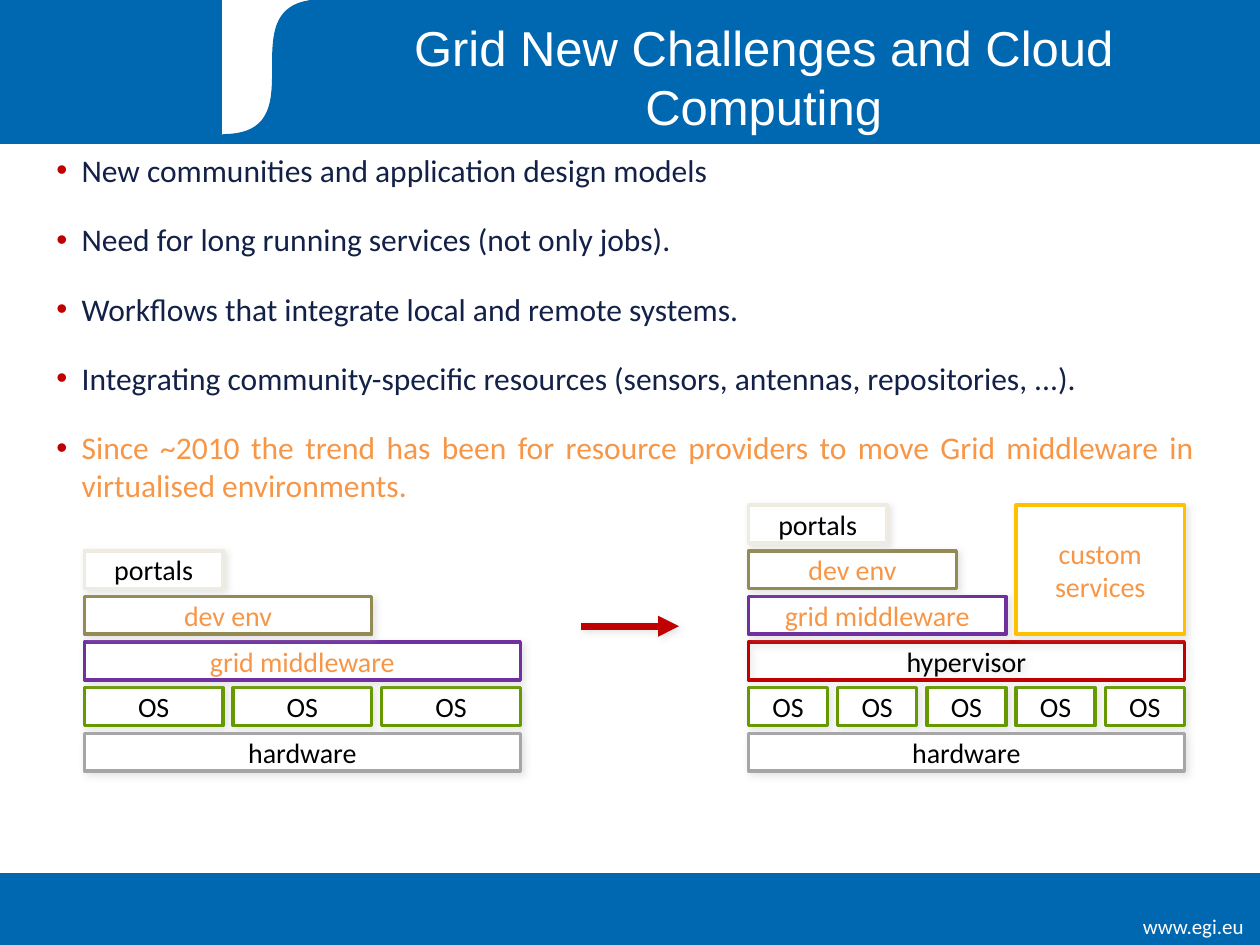
from lxml import etree
from pptx import Presentation
from pptx.dml.color import RGBColor
from pptx.enum.shapes import MSO_CONNECTOR, MSO_SHAPE
from pptx.enum.text import MSO_ANCHOR, PP_ALIGN
from pptx.oxml.ns import qn
from pptx.util import Inches, Pt

COLORS = {
    "blue": "0067B1", "white": "FFFFFF", "black": "000000", "navy": "132148",
    "orange": "F79646", "red": "C00000", "gray": "A6A6A6", "purple": "7030A0",
    "cream": "EEECE1", "olive": "948A54", "green": "669900", "gold": "FFC000",
    "shadow": "BFBFBF",
}
BULLETS = [
    ("New communities and application design models", "navy"),
    ("Need for long running services (not only jobs).", "navy"),
    ("Workflows that integrate local and remote systems.", "navy"),
    ("Integrating community-specific resources (sensors, antennas, repositories, ...).", "navy"),
    ("Since ~2010 the trend has been for resource providers to move Grid "
     "middleware in virtualised environments.", "orange"),
]
STACK_WIDTH, GAP = 3.46, 0.08
LAYER_HEIGHT, BOTTOM_LAYER, TOP_LAYER = 0.3, 5.82, 4.01
LAYER_PITCH = (BOTTOM_LAYER - TOP_LAYER) / 5
BEFORE, NOW = 0.67, 5.94  # left edges of the two stacks


def rgb(name):
    return RGBColor.from_string(COLORS[name])


def span(cells, columns):
    """Width of some neighbouring cells when a stack is cut into columns."""
    cell = (STACK_WIDTH - GAP * (columns - 1)) / columns
    return cells * cell + (cells - 1) * GAP


def add_run(paragraph, text, size, color, font="Calibri"):
    run = paragraph.add_run()
    run.text = text
    run.font.size, run.font.name = Pt(size), font
    run.font.color.rgb = rgb(color)


def paint(shape, fill, line=None, weight=0.75):
    shape.shadow.inherit = False
    if fill:
        shape.fill.solid()
        shape.fill.fore_color.rgb = rgb(fill)
    else:
        shape.fill.background()
    if line:
        shape.line.color.rgb = rgb(line)
        shape.line.width = Pt(weight)
    else:
        shape.line.fill.background()


def add_rect(slide, left, top, width, height, fill, line=None, weight=0.75):
    rect = slide.shapes.add_shape(
        MSO_SHAPE.RECTANGLE, Inches(left), Inches(top), Inches(width), Inches(height))
    paint(rect, fill, line, weight)
    return rect


def add_text_frame(slide, left, top, width, height):
    box = slide.shapes.add_textbox(
        Inches(left), Inches(top), Inches(width), Inches(height))
    box.text_frame.word_wrap = True
    return box.text_frame


def add_soft_shadow(shape):
    properties = shape._element.spPr
    effects = properties.find(qn("a:effectLst"))
    if effects is None:
        effects = etree.SubElement(properties, qn("a:effectLst"))
    shadow = etree.SubElement(
        effects, qn("a:outerShdw"), blurRad=str(Pt(4)), dist=str(Pt(2)),
        dir="2700000", algn="tl", rotWithShape="0")
    color = etree.SubElement(shadow, qn("a:srgbClr"), val=COLORS["shadow"])
    etree.SubElement(color, qn("a:alpha"), val="40000")


def add_swoosh(slide):
    """White panel in the banner, cut by a blue S-shaped edge."""
    left, right, bottom, crest = 1.77, 3.74, 1.07, 2.56
    add_rect(slide, left, 0, right - left, bottom, "white", "white")
    steps = 40
    edge = []
    for step in range(steps + 1):
        t = step / steps
        rise = 3 * t * t * (1 - t) + t ** 3
        x = (left * ((1 - t) ** 3 + 3 * t * t * (1 - t))
             + crest * (3 * t * (1 - t) ** 2 + t ** 3))
        edge.append((Inches(x), Inches(bottom * (1 - rise))))
    builder = slide.shapes.build_freeform(Inches(right), 0)
    builder.add_line_segments([(Inches(right), Inches(bottom))] + edge)
    paint(builder.convert_to_shape(), "blue", "blue")


def add_bullet(paragraph, text, color):
    properties = paragraph._p.get_or_add_pPr()
    properties.set("marL", str(Inches(0.2)))
    properties.set("indent", str(Inches(-0.2)))
    bullet_color = etree.SubElement(properties, qn("a:buClr"))
    etree.SubElement(bullet_color, qn("a:srgbClr"), val=COLORS["red"])
    etree.SubElement(properties, qn("a:buFont"), typeface="Arial")
    etree.SubElement(properties, qn("a:buChar"), char="•")
    paragraph.alignment = PP_ALIGN.JUSTIFY
    paragraph.line_spacing = Pt(21.6)
    paragraph.space_after = Pt(12)
    add_run(paragraph, text, 18, color)


def add_bullets(slide):
    frame = add_text_frame(slide, 0.35, 1.15, 9.23, 2.6)
    for index, (text, color) in enumerate(BULLETS):
        paragraph = frame.add_paragraph() if index else frame.paragraphs[0]
        add_bullet(paragraph, text, color)
        if index:
            paragraph.space_before = Pt(6)


def add_layer(slide, label, left, level, width, line, color="black", levels=1, fill="white"):
    """Labelled block; level counts up from the hardware, levels is its height."""
    top = BOTTOM_LAYER - (level + levels - 1) * LAYER_PITCH
    height = LAYER_HEIGHT + (levels - 1) * LAYER_PITCH
    layer = add_rect(slide, left, top, width, height, fill, line, 2)
    add_soft_shadow(layer)
    frame = layer.text_frame
    frame.word_wrap = True
    frame.vertical_anchor = MSO_ANCHOR.MIDDLE
    frame.margin_top = frame.margin_bottom = 0
    paragraph = frame.paragraphs[0]
    paragraph.alignment = PP_ALIGN.CENTER
    add_run(paragraph, label, 16, color)


def add_base(slide, left, systems):
    """Hardware with a row of operating systems on it."""
    add_layer(slide, "hardware", left, 0, STACK_WIDTH, "gray")
    width = span(1, systems)
    for index in range(systems):
        add_layer(slide, "OS", left + index * (width + GAP), 1, width, "green")


def add_arrow(slide):
    arrow = slide.shapes.add_connector(
        MSO_CONNECTOR.STRAIGHT, Inches(4.61), Inches(4.97), Inches(5.39), Inches(4.97))
    arrow.line.color.rgb = rgb("red")
    arrow.line.width = Pt(4)
    etree.SubElement(arrow.line._get_or_add_ln(), qn("a:tailEnd"), type="triangle")
    add_soft_shadow(arrow)


def main():
    deck = Presentation()
    deck.slide_width, deck.slide_height = Inches(10), Inches(7.5)
    slide = deck.slides.add_slide(deck.slide_layouts[6])

    add_rect(slide, 0, 6.93, 10, 0.6, "blue")
    add_rect(slide, 0, 0, 10, 1.14, "blue", "blue")
    add_swoosh(slide)

    address = add_text_frame(slide, 8.39, 7.2, 1.58, 0.31).paragraphs[0]
    address.alignment = PP_ALIGN.RIGHT
    add_run(address, "www.egi.eu", 12, "white")

    title_frame = add_text_frame(slide, 2.32, 0.13, 7.48, 0.95)
    title_frame.vertical_anchor = MSO_ANCHOR.MIDDLE
    title = title_frame.paragraphs[0]
    title.alignment = PP_ALIGN.CENTER
    add_run(title, "Grid New Challenges and Cloud Computing", 28, "white", "Arial")

    add_bullets(slide)

    add_base(slide, BEFORE, 3)
    add_layer(slide, "grid middleware", BEFORE, 2, STACK_WIDTH, "purple", "orange")
    add_layer(slide, "dev env", BEFORE, 3, span(2, 3), "olive", "orange")
    add_layer(slide, "portals", BEFORE, 4, span(1, 3), "cream")

    add_base(slide, NOW, 5)
    add_layer(slide, "hypervisor", NOW, 2, STACK_WIDTH, "red", fill=None)
    add_layer(slide, "grid middleware", NOW, 3, span(3, 5), "purple", "orange")
    add_layer(slide, "dev env", NOW, 4, 1.65, "olive", "orange")
    add_layer(slide, "portals", NOW, 5, span(1, 3), "cream")
    add_layer(slide, "custom services", NOW + span(3, 5) + GAP, 3, span(2, 5),
              "gold", "orange", levels=3)

    add_arrow(slide)
    deck.save("out.pptx")


if __name__ == "__main__":
    main()
